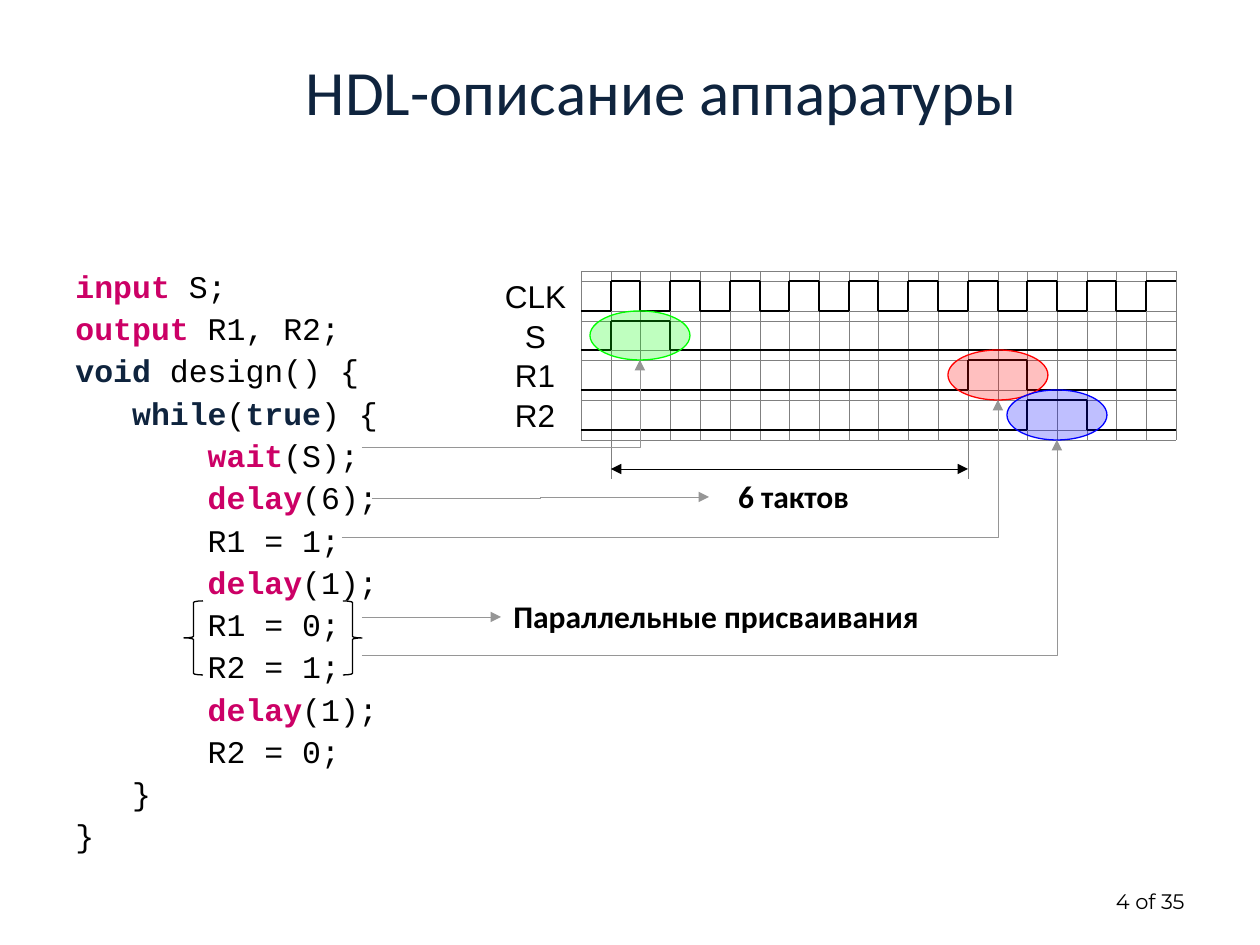
from dataclasses import dataclass
from itertools import pairwise

from lxml import etree
from pptx import Presentation, util as u
from pptx.dml.color import RGBColor
from pptx.enum import shapes, text
from pptx.oxml.ns import qn

PX = u.Inches(1) / 126
GRID_LEFT, GRID_TOP, GRID_WIDTH = 581, 271, 595
COLUMNS, COLUMN_UNITS, ROW_UNITS = 20, 3, 4
GRID_HEIGHT_UNITS = 17
UNIT = GRID_WIDTH / (COLUMNS * COLUMN_UNITS)


@dataclass(frozen=True)
class Theme:
    black: str = "000000"
    navy: str = "0F243E"
    pink: str = "CC0066"
    grid: str = "808080"
    arrow: str = "969696"
    title_size: float = 36
    text_size: float = 18
    page_size: float = 12
    heading_font: str = "Calibri"
    label_font: str = "Arial"
    code_font: str = "Courier New"
    page_font: str = "Montserrat"


THEME = Theme()
KEYWORD_COLORS = {word: THEME.pink for word in ("input", "output", "wait", "delay")}
KEYWORD_COLORS |= {word: THEME.navy for word in ("void", "while", "true")}

# Indent in characters, then the pieces of the line.
CODE = [
    (0, ["input", " S;"]),
    (0, ["output", " R1, R2;"]),
    (0, ["void", " design() {"]),
    (3, ["while", "(", "true", ") {"]),
    (7, ["wait", "(S);"]),
    (7, ["delay", "(6);"]),
    (7, ["R1 = 1;"]),
    (7, ["delay", "(1);"]),
    (7, ["R1 = 0;"]),
    (7, ["R2 = 1;"]),
    (7, ["delay", "(1);"]),
    (7, ["R2 = 0;"]),
    (3, ["}"]),
    (0, ["}"]),
]

# Label, label width, and the columns where the signal changes level.
SIGNALS = [
    ("CLK", 87, range(1, COLUMNS)),
    ("S", 47, [1, 3]),
    ("R1", 66, [13, 15]),
    ("R2", 66, [15, 17]),
]
# Signal row, centre column, colour, and where the arrow from the code starts.
EVENTS = [
    (1, 2, "00FF00", (362, 447)),
    (2, 14, "FF0000", (342, 537)),
    (3, 16, "0000FF", (362, 655)),
]


def px(length):
    return round(length * PX)


def column_x(column):
    return round(GRID_LEFT + column * COLUMN_UNITS * UNIT)


def unit_y(units):
    return round(GRID_TOP + units * UNIT)


def apply(target, values):
    for name, value in values.items():
        setattr(target, name, value)


def add_run(paragraph, content, font, size, color=THEME.black, bold=False):
    run = paragraph.add_run()
    run.text = content
    apply(run.font, {"name": font, "size": u.Pt(size), "bold": bold})
    run.font.color.rgb = RGBColor.from_string(color)


def add_text_frame(slide, box, anchor=text.MSO_ANCHOR.TOP, wrap=True):
    frame = slide.shapes.add_textbox(*map(px, box)).text_frame
    apply(frame, {"word_wrap": wrap, "vertical_anchor": anchor})
    return frame


def add_label(slide, box, content, font, size=THEME.text_size, color=THEME.black,
              bold=False, align=text.PP_ALIGN.CENTER, **frame_values):
    paragraph = add_text_frame(slide, box, **frame_values).paragraphs[0]
    paragraph.alignment = align
    add_run(paragraph, content, font, size, color, bold)


def add_code(slide, box):
    frame = add_text_frame(slide, box)
    for index, (indent, pieces) in enumerate(CODE):
        paragraph = frame.add_paragraph() if index else frame.paragraphs[0]
        apply(paragraph, {"line_spacing": 0.9, "space_before": u.Pt(4.7)})
        # A character of the fixed-width font is 0.6 of its size wide.
        margin = u.Pt(indent * 0.6 * THEME.text_size)
        paragraph._p.get_or_add_pPr().set("marL", str(margin))
        for piece in pieces:
            color = KEYWORD_COLORS.get(piece, THEME.black)
            add_run(paragraph, piece, THEME.code_font, THEME.text_size, color,
                    piece in KEYWORD_COLORS)


def add_line(slide, start, end, color, width, kind="line", ends=()):
    """Draw a connector; ends may hold "headEnd" and "tailEnd" arrowheads."""
    connector = slide.shapes.add_connector(
        shapes.MSO_CONNECTOR.STRAIGHT, *map(px, (*start, *end)))
    properties = connector._element.spPr
    properties.find(qn("a:prstGeom")).set("prst", kind)
    connector.line.color.rgb = RGBColor.from_string(color)
    connector.line.width = u.Pt(width)
    for name in ends:
        etree.SubElement(properties.find(qn("a:ln")), qn(f"a:{name}"), type="triangle")
    etree.SubElement(properties, qn("a:effectLst"))


def add_outline(slide, kind, box, color, opacity=None):
    shape = slide.shapes.add_shape(kind, *map(px, box))
    shape.shadow.inherit = False
    shape.line.color.rgb = RGBColor.from_string(color)
    shape.line.width = u.Pt(0.75)
    if opacity is None:
        shape.fill.background()
    else:
        shape.fill.solid()
        shape.fill.fore_color.rgb = RGBColor.from_string(color)
        fill_color = shape._element.spPr.find(qn("a:solidFill"))[0]
        etree.SubElement(fill_color, qn("a:alpha"), val=str(opacity * 1000))
    return shape


def add_grid(slide):
    left, right = column_x(0), column_x(COLUMNS)
    for units in range(GRID_HEIGHT_UNITS + 1):
        if units % ROW_UNITS in (0, 1) and units < GRID_HEIGHT_UNITS or units == GRID_HEIGHT_UNITS:
            add_line(slide, (left, unit_y(units)), (right, unit_y(units)), THEME.grid, 0.5)
    for column in range(COLUMNS + 1):
        x = column_x(column)
        add_line(slide, (x, unit_y(0)), (x, unit_y(GRID_HEIGHT_UNITS)), THEME.grid, 0.5)


def add_signal(slide, row, changes):
    high, low = (unit_y(row * ROW_UNITS + offset) for offset in (1, 4))
    level, points = low, [(column_x(0), low)]
    for column in changes:
        points.append((column_x(column), level))
        level = high if level == low else low
        points.append((column_x(column), level))
    points.append((column_x(COLUMNS), level))
    for start, end in pairwise(points):
        add_line(slide, start, end, THEME.black, 1.5)


def add_interval(slide, first, last):
    """Mark the span between two columns below the grid."""
    for column in (first, last):
        x = column_x(column)
        add_line(slide, (x, unit_y(17)), (x, unit_y(21)), THEME.grid, 0.5)
    add_line(slide, (column_x(first), unit_y(20)), (column_x(last), unit_y(20)),
             THEME.black, 0.5, ends=("headEnd", "tailEnd"))


def add_event(slide, row, column, color, start):
    x, top, bottom = column_x(column), unit_y(row * ROW_UNITS), unit_y(row * ROW_UNITS + 5)
    add_outline(slide, shapes.MSO_SHAPE.OVAL, (x - 50, top, 100, bottom - top), color, 25)
    add_line(slide, start, (x, bottom), THEME.arrow, 0.25, "bentConnector2", ["tailEnd"])


def main():
    presentation = Presentation()
    apply(presentation, {"slide_width": px(1260), "slide_height": px(945)})
    slide = presentation.slides.add_slide(presentation.slide_layouts[6])
    middle = text.MSO_ANCHOR.MIDDLE
    add_label(slide, (63, -4, 1197, 189), "HDL-описание аппаратуры", THEME.heading_font,
              THEME.title_size, THEME.navy, anchor=middle)
    add_code(slide, (63, 265, 457, 635))
    add_label(slide, (903, 876, 294, 50), "4 of 35", THEME.page_font, THEME.page_size,
              align=text.PP_ALIGN.RIGHT, anchor=middle)
    add_grid(slide)
    for row, (name, width, changes) in enumerate(SIGNALS):
        add_signal(slide, row, changes)
        add_label(slide, (535 - width // 2, unit_y(row * ROW_UNITS), width, 50), name,
                  THEME.label_font, wrap=False)
    add_interval(slide, 1, 13)
    for event in EVENTS:
        add_event(slide, *event)
    add_label(slide, (709, 471, 169, 50), "6 тактов", THEME.heading_font, bold=True)
    add_line(slide, (372, 498), (709, 497), THEME.arrow, 0.25, "bentConnector3", ["tailEnd"])
    add_label(slide, (501, 591, 481, 50), "Параллельные присваивания", THEME.heading_font,
              bold=True, align=text.PP_ALIGN.LEFT)
    add_line(slide, (362, 617), (501, 617), THEME.arrow, 0.25, ends=["tailEnd"])
    for kind, left in ((shapes.MSO_SHAPE.LEFT_BRACE, 184), (shapes.MSO_SHAPE.RIGHT_BRACE, 343)):
        brace = add_outline(slide, kind, (left, 601, 19, 74), THEME.black)
        brace.adjustments[0] = 0.08
    presentation.save("out.pptx")


if __name__ == "__main__":
    main()
